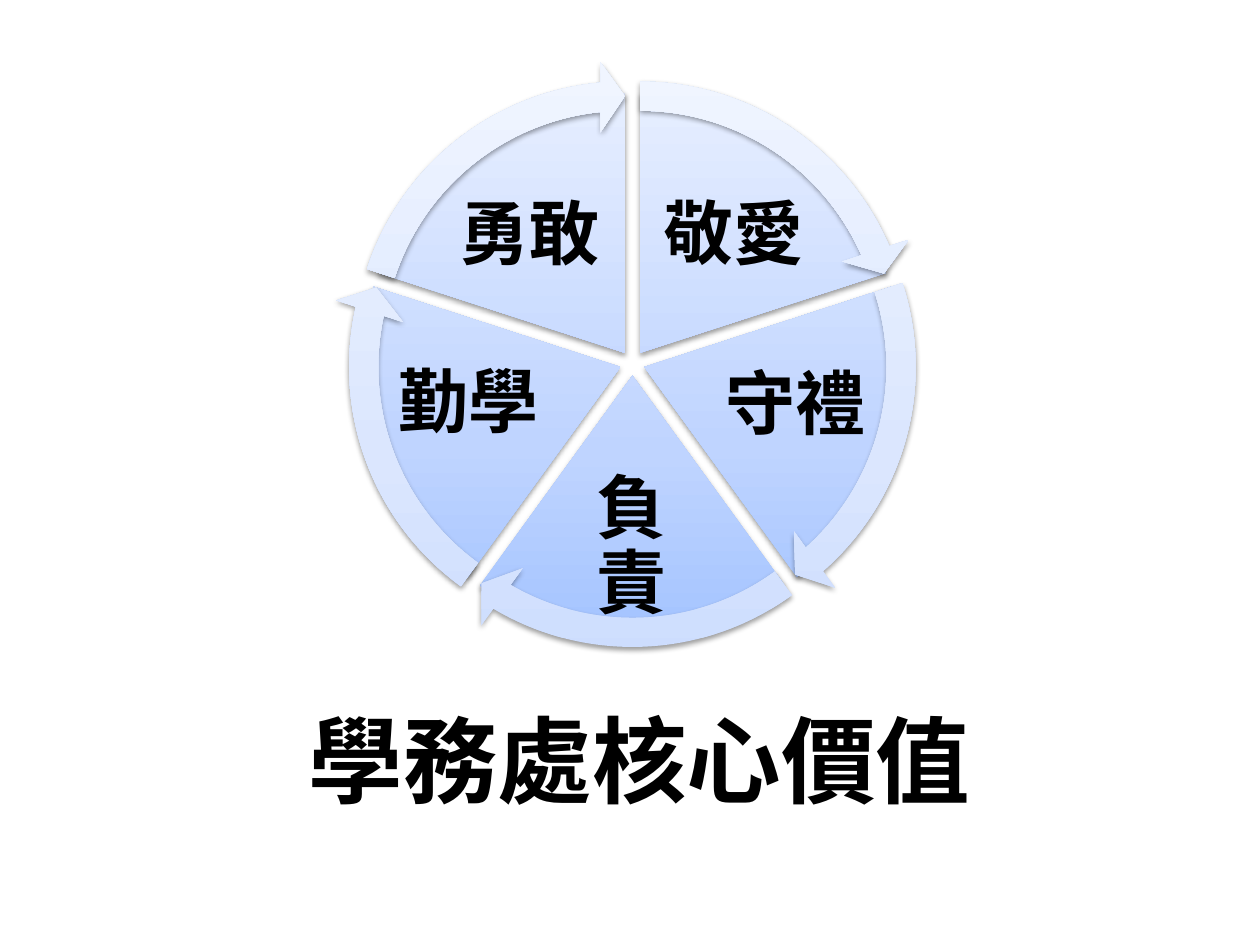
from copy import deepcopy
from dataclasses import dataclass
from math import cos, radians, sin

from lxml import etree
from pptx import Presentation
from pptx.dml.color import RGBColor
from pptx.enum import shapes, text
from pptx.oxml import ns
from pptx.util import Pt


@dataclass(frozen=True)
class Theme:
    font: str = "Calibri"
    language: str = "zh-TW"
    ink: str = "000000"
    sector: tuple = ("A4C4FF", "BFD4FF", "E6EEFF")
    arrow: tuple = ("CDDDFE", "DBE6FE", "F0F5FF")
    stops: tuple = (0, 0.35, 1)
    label_size: int = 40
    title_size: int = 54


class ValueWheel:
    def __init__(self, slide, theme, center):
        self.slide = slide
        self.theme = theme
        self.center = center

    def style_runs(self, paragraph, size):
        paragraph.alignment = text.PP_ALIGN.CENTER
        for run in paragraph.runs:
            run.font.name = self.theme.font
            run.font.size = Pt(size)
            run.font.bold = True
            run.font.color.rgb = RGBColor.from_string(self.theme.ink)
            run._r.get_or_add_rPr().set("lang", self.theme.language)

    def gradient(self, fill, colors):
        fill.gradient()
        fill.gradient_angle = 90
        first = fill._xPr.find(ns.qn("a:gradFill")).find(ns.qn("a:gsLst"))[0]
        first.addnext(deepcopy(first))
        for stop, color, position in zip(fill.gradient_stops, colors, self.theme.stops):
            stop.color.rgb = RGBColor.from_string(color)
            stop.position = position

    def drop_shadow(self, shape):
        shape.shadow.inherit = False
        effects = shape._element.spPr.find(ns.qn("a:effectLst"))
        shadow = etree.SubElement(
            effects, ns.qn("a:outerShdw"), blurRad=str(Pt(3.15)), dist=str(Pt(1.57)),
            dir="5400000", rotWithShape="0")
        color = etree.SubElement(shadow, ns.qn("a:srgbClr"), val=self.theme.ink)
        etree.SubElement(color, ns.qn("a:alpha"), val="38000")

    def ring_part(self, kind, middle, offset, size, adjustments, colors):
        left = self.center[0] + offset * cos(radians(middle)) - size / 2
        top = self.center[1] + offset * sin(radians(middle)) - size / 2
        part = self.slide.shapes.add_shape(kind, Pt(left), Pt(top), Pt(size), Pt(size))
        for index, value in enumerate(adjustments):
            part.adjustments[index] = value
        self.gradient(part.fill, colors)
        part.line.fill.background()
        self.drop_shadow(part)

    def label(self, wording, box):
        frame = self.slide.shapes.add_textbox(*map(Pt, box)).text_frame
        frame.word_wrap = True
        frame.vertical_anchor = text.MSO_ANCHOR.MIDDLE
        frame.margin_left = frame.margin_right = Pt(4)
        frame.margin_top = frame.margin_bottom = Pt(4)
        frame.text = wording
        paragraph = frame.paragraphs[0]
        paragraph.line_spacing = 0.9
        paragraph.space_after = Pt(14)
        self.style_runs(paragraph, self.theme.label_size)

    def title(self, wording, box):
        heading = self.slide.shapes.title
        heading.left, heading.top, heading.width, heading.height = map(Pt, box)
        heading.text_frame.text = wording
        heading.text_frame.vertical_anchor = text.MSO_ANCHOR.MIDDLE
        self.style_runs(heading.text_frame.paragraphs[0], self.theme.title_size)


VALUES = [
    ("敬愛", (371.5, 103.7, 95, 63.4)),
    ("守禮", (410.2, 197.3, 88.5, 70.6)),
    ("負責", (318.2, 274.3, 85, 77.8)),
    ("勤學", (223.7, 195.8, 88.5, 70.6)),
    ("勇敢", (254.9, 103.7, 95, 63.4)),
]
FULL_TURN = 216
SECTOR_SWEEP = FULL_TURN / len(VALUES)
WHEEL_TOP = 162
OFFSET = 7.2
SECTOR_SIZE = 296.6
ARROW_SIZE = 333.4


def main():
    deck = Presentation()
    deck.slide_width, deck.slide_height = Pt(720), Pt(540)
    slide = deck.slides.add_slide(deck.slide_layouts[5])
    theme = Theme()
    wheel = ValueWheel(slide, theme, (361.4, 207.5))

    sectors = []
    for index in range(len(VALUES)):
        start = (WHEEL_TOP + index * SECTOR_SWEEP) % FULL_TURN
        middle = (index + 0.5) * 360 / len(VALUES) - 90
        sectors.append((start, middle))

    for (wording, box), (start, middle) in zip(VALUES, sectors):
        end = (start + SECTOR_SWEEP) % FULL_TURN
        wheel.ring_part(shapes.MSO_SHAPE.PIE, middle, OFFSET, SECTOR_SIZE,
                        (start, end), theme.sector)
        wheel.label(wording, box)

    for start, middle in sectors:
        tip = (start + 39.92) % FULL_TURN
        wheel.ring_part(shapes.MSO_SHAPE.CIRCULAR_ARROW, middle, OFFSET, ARROW_SIZE,
                        (0.05, 3.28, tip, start, 0.06), theme.arrow)

    wheel.title("學務處核心價值", (25.2, 388.8, 680.4, 90))
    deck.save("out.pptx")


if __name__ == "__main__":
    main()
